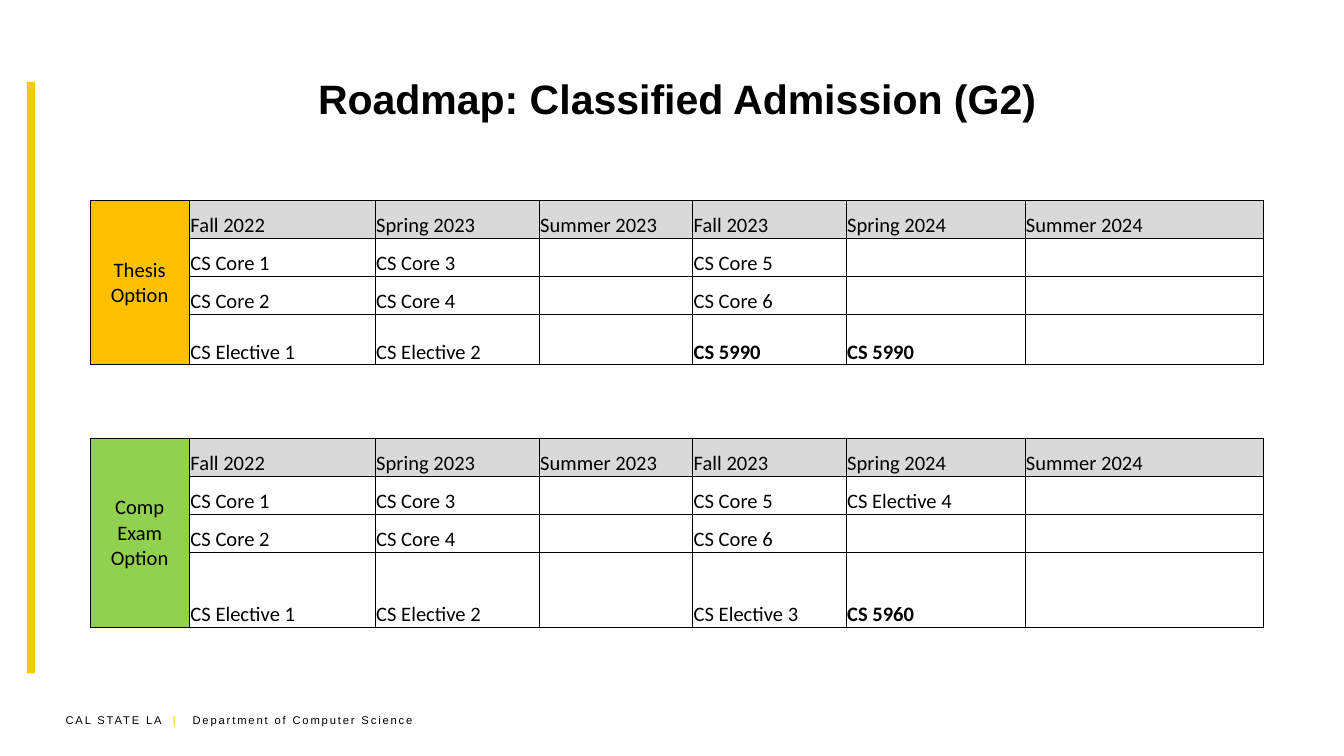
from lxml.etree import SubElement
from pptx import Presentation
from pptx.dml.color import RGBColor
from pptx.enum.shapes import MSO_SHAPE
from pptx.enum.text import MSO_ANCHOR as Anchor, PP_ALIGN as Align
from pptx.oxml import parse_xml
from pptx.oxml.ns import nsdecls, qn
from pptx.util import Cm, Pt

BLACK = RGBColor(0x00, 0x00, 0x00)
GOLD = RGBColor(0xFC, 0xC9, 0x0A)
AMBER = RGBColor(0xFF, 0xC0, 0x00)
GREEN = RGBColor(0x92, 0xD0, 0x50)
GREY = RGBColor(0xD9, 0xD9, 0xD9)

COLUMN_WIDTHS = [1.88, 3.51, 3.1, 2.9, 2.9, 3.38, 4.5]
ROW_HEIGHT = 0.72
TERMS = ["Fall 2022", "Spring 2023", "Summer 2023",
         "Fall 2023", "Spring 2024", "Summer 2024"]
THESIS_COURSES = [
    ["CS Core 1", "CS Core 3", "", "CS Core 5", "", ""],
    ["CS Core 2", "CS Core 4", "", "CS Core 6", "", ""],
    ["CS Elective 1", "CS Elective 2", "", "CS 5990", "CS 5990", ""],
]
EXAM_COURSES = [
    ["CS Core 1", "CS Core 3", "", "CS Core 5", "CS Elective 4", ""],
    ["CS Core 2", "CS Core 4", "", "CS Core 6", "", ""],
    ["CS Elective 1", "CS Elective 2", "", "CS Elective 3", "CS 5960", ""],
]
FINAL_COURSES = {"CS 5990", "CS 5960"}


def add_run(p, text, size, font="Arial", color=BLACK, bold=False):
    r = p.add_run()
    r.text = text
    r.font.size = Pt(size)
    r.font.name = font
    r.font.color.rgb = color
    r.font.bold = bold
    return r


def add_text_box(s, left, top, width, height):
    tf = s.shapes.add_textbox(Cm(left), Cm(top), Cm(width), Cm(height)).text_frame
    tf.word_wrap = True
    return tf


def add_title(s, text):
    tf = add_text_box(s, 1.5, 0.66, 22.6, 2.39)
    tf.vertical_anchor = Anchor.MIDDLE
    p = tf.paragraphs[0]
    p.alignment = Align.CENTER
    add_run(p, text, 22, bold=True)


def add_side_bar(s):
    sp = s.shapes.add_shape(MSO_SHAPE.RECTANGLE, Cm(0.51), Cm(1.55), Cm(0.15), Cm(11.18))
    sp.shadow.inherit = False
    sp.fill.solid()
    sp.fill.fore_color.rgb = GOLD
    sp.line.fill.background()


def add_footer(s):
    p = add_text_box(s, 0.99, 13.36, 7.42, 0.51).paragraphs[0]
    tabs = SubElement(p._p.get_or_add_pPr(), qn("a:tabLst"))
    SubElement(tabs, qn("a:tab"), pos=str(Cm(2.4)), algn="l")
    parts = [("CAL STATE LA ", BLACK), (" |", GOLD),
             ("\tDepartment of Computer Science", BLACK)]
    for text, color in parts:
        r = add_run(p, text, 6, color=color)
        r.font._element.set("spc", "100")


def set_borders(cell):
    tc_pr = cell._tc.get_or_add_tcPr()
    for i, side in enumerate(["lnL", "lnR", "lnT", "lnB"]):
        tc_pr.insert(i, parse_xml(
            f'<a:{side} {nsdecls("a")} w="{Pt(0.5)}"><a:solidFill>'
            f'<a:srgbClr val="{BLACK}"/></a:solidFill></a:{side}>'))


def fill_cell(cell, text, fill=None, anchor=Anchor.BOTTOM, align=Align.LEFT):
    cell.margin_left = cell.margin_right = cell.margin_top = Cm(0.02)
    cell.margin_bottom = 0
    cell.vertical_anchor = anchor
    p = cell.text_frame.paragraphs[0]
    p.alignment = align
    if text:
        add_run(p, text, 11, "Calibri", bold=text in FINAL_COURSES)
    else:
        # Keeps empty cells from stretching their row
        p._p.get_or_add_endParaRPr().set("sz", "1100")
    if fill is None:
        cell.fill.background()
    else:
        cell.fill.solid()
        cell.fill.fore_color.rgb = fill
    set_borders(cell)


def add_roadmap(s, top, option, color, courses):
    rows = [TERMS] + courses
    table = s.shapes.add_table(
        len(rows), len(COLUMN_WIDTHS), Cm(1.7), Cm(top),
        Cm(sum(COLUMN_WIDTHS)), Cm(ROW_HEIGHT * len(rows))).table
    table.first_row = table.horz_banding = False
    for column, width in zip(table.columns, COLUMN_WIDTHS):
        column.width = Cm(width)

    # Terms and courses
    for i, row in enumerate(rows):
        table.rows[i].height = Cm(ROW_HEIGHT)
        for j, text in enumerate(row, start=1):
            fill_cell(table.cell(i, j), text, GREY if i == 0 else None)

    # Option label down the first column
    for i in range(len(rows)):
        fill_cell(table.cell(i, 0), option if i == 0 else "", color,
                  Anchor.MIDDLE, Align.CENTER)
    table.cell(0, 0).merge(table.cell(len(rows) - 1, 0))


def main():
    prs = Presentation()
    prs.slide_width, prs.slide_height = Cm(25.4), Cm(14.29)
    s = prs.slides.add_slide(prs.slide_layouts[6])

    # Frame
    add_footer(s)
    add_side_bar(s)
    add_title(s, "Roadmap: Classified Admission (G2)")

    # Roadmaps
    add_roadmap(s, 3.78, "Thesis Option", AMBER, THESIS_COURSES)
    add_roadmap(s, 8.28, "Comp Exam Option", GREEN, EXAM_COURSES)

    prs.save("out.pptx")


if __name__ == "__main__":
    main()
